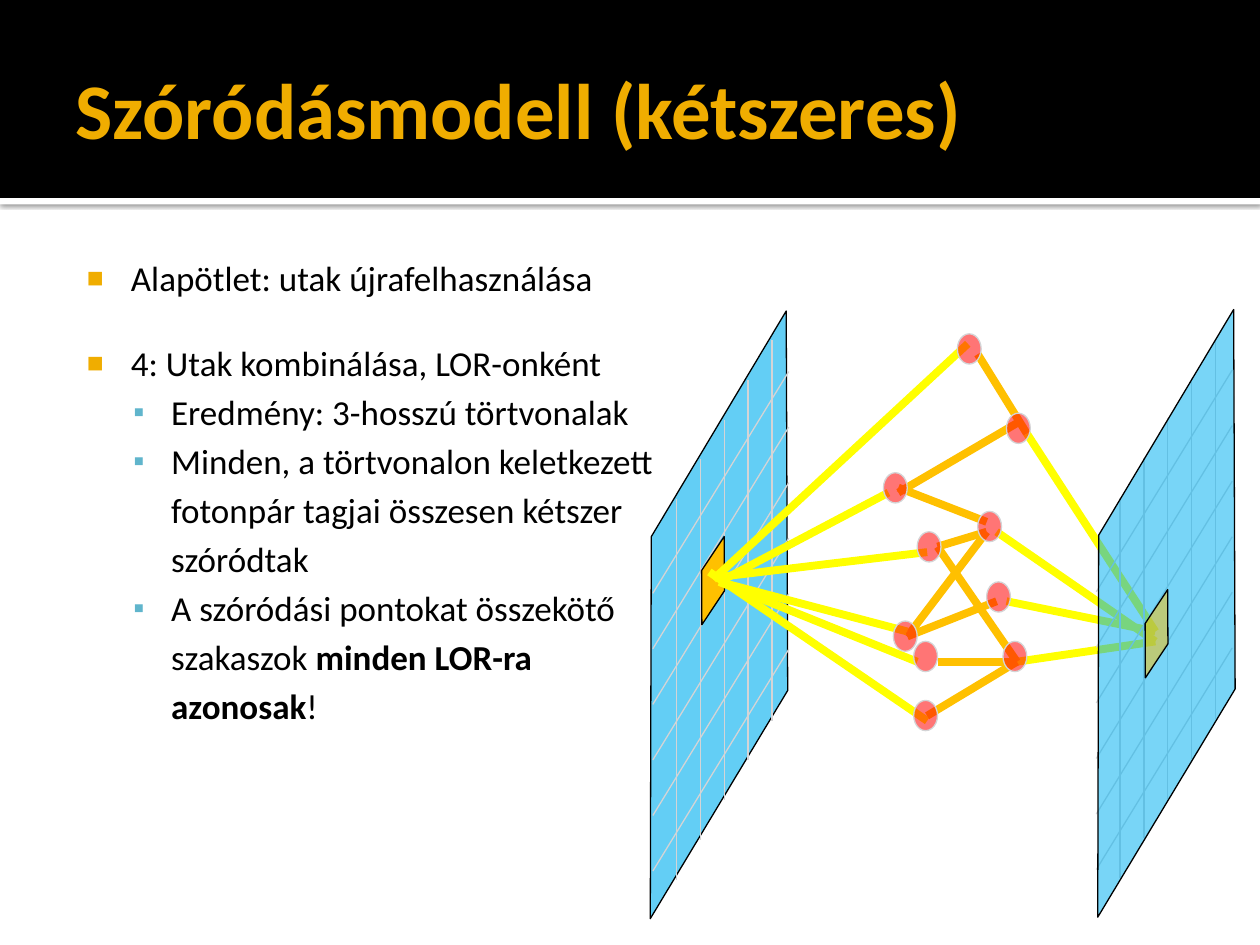
from lxml.etree import SubElement
from pptx import Presentation
from pptx.dml.color import RGBColor
from pptx.enum.shapes import MSO_CONNECTOR, MSO_SHAPE
from pptx.enum.text import MSO_ANCHOR, MSO_AUTO_SIZE, PP_ALIGN
from pptx.oxml.ns import qn
from pptx.util import Cm, Pt

COLORS = {
    "black": "000000", "white": "FFFFFF", "gold": "F0AD00", "teal": "60B5CC",
    "panel": "00B0F0", "grid": "D4D4D6", "orange": "FFC000",
    "yellow": "FFFF00", "red": "FF0000",
}

# (level, bullet?, space before in points, runs of (text, bold))
BODY = [
    (0, True, 0, [("Alapötlet: utak újrafelhasználása", False)]),
    (0, True, 24.4, [("4: Utak kombinálása, LOR-onként", False)]),
    (1, True, 4, [("Eredmény: 3-hosszú törtvonalak", False)]),
    (1, True, 4, [("Minden, a törtvonalon keletkezett", False)]),
    (1, False, 4, [("fotonpár tagjai összesen kétszer", False)]),
    (1, False, 4, [("szóródtak", False)]),
    (1, True, 4, [("A szóródási pontokat összekötő", False)]),
    (1, False, 4, [("szakaszok ", False), ("minden LOR-ra", True)]),
    (1, False, 4, [("azonosak", True), ("!", False)]),
]
# Per level: left margin, hanging indent, bullet, bullet colour, bullet size
LEVELS = [(1.22, 0.89, "■", "gold", 80), (2.03, 0.76, "▪", "teal", 90)]

# All places below are in centimetres; a ray is (colour, x1, y1, x2, y2)
RAYS_BEHIND = [
    ("orange", 19.89, 10.72, 18.29, 12.83),
    ("yellow", 20.7, 8.74, 23.29, 12.73),
    ("yellow", 20.09, 10.72, 23.29, 12.93),
    ("yellow", 20.29, 12.12, 23.29, 12.73),
    ("yellow", 20.5, 13.34, 23.29, 12.93),
]
RAYS_FRONT = [
    ("yellow", 14.5, 11.73, 18.29, 12.73),
    ("yellow", 14.5, 11.73, 17.91, 9.93),
    ("yellow", 14.38, 11.68, 19.51, 6.93),
    ("orange", 20.5, 8.53, 18.11, 9.93),
    ("orange", 19.89, 10.52, 18.11, 9.83),
    ("yellow", 14.3, 11.53, 18.69, 14.53),
    ("yellow", 14.5, 11.63, 18.69, 11.13),
    ("orange", 20.7, 8.74, 19.71, 7.14),
    ("orange", 20.09, 12.12, 18.29, 12.83),
    ("orange", 20.5, 13.34, 18.9, 11.02),
    ("orange", 19.89, 10.72, 18.9, 11.02),
    ("orange", 20.5, 13.34, 18.69, 14.43),
    ("yellow", 14.5, 11.73, 18.49, 13.34),
    ("orange", 20.5, 13.34, 18.9, 13.34),
]
SCATTER_POINTS = [
    (19.71, 10.31), (18.01, 12.52), (19.3, 6.73), (18.49, 10.72), (19.89, 11.73),
    (17.81, 9.53), (20.29, 8.33), (18.42, 14.12), (18.42, 12.93), (20.22, 12.93),
]
PANEL = [(13.13, 10.82), (13.11, 18.52), (15.88, 13.92), (15.85, 6.27)]


def rgb(name):
    return RGBColor.from_string(COLORS[name])


def write(p, text, size=20, color="black", bold=False, font="Calibri"):
    r = p.add_run()
    r.text = text
    r.font.size, r.font.bold, r.font.name = Pt(size), bold, font
    r.font.color.rgb = rgb(color)
    return r


def set_bullet(p, char, color, percent):
    pPr = p._p.get_or_add_pPr()
    clr = SubElement(pPr, qn("a:buClr"))
    SubElement(clr, qn("a:srgbClr"), val=COLORS[color])
    SubElement(pPr, qn("a:buSzPct"), val=str(percent * 1000))
    SubElement(pPr, qn("a:buChar"), char=char)


class SlideBuilder:
    """Holds the slide and the common line width."""

    def __init__(self, slide, thin=0.75):
        self.s, self.thin = slide, thin

    def paint(self, sp, fill, alpha=100, line="black"):
        sp.shadow.inherit = False
        sp.fill.solid()
        sp.fill.fore_color.rgb = rgb(fill)
        if alpha < 100:
            clr = sp._element.spPr.find(qn("a:solidFill"))[0]
            SubElement(clr, qn("a:alpha"), val=str(alpha * 1000))
        if line:
            sp.line.color.rgb = rgb(line)
            sp.line.width = Pt(self.thin)
        else:
            sp.line.fill.background()
        return sp

    def shape(self, kind, x, y, w, h, fill, **style):
        sp = self.s.shapes.add_shape(kind, Cm(x), Cm(y), Cm(w), Cm(h))
        return self.paint(sp, fill, **style)

    def outline(self, points, fill, **style):
        start, *rest = [(Cm(x), Cm(y)) for x, y in points]
        fb = self.s.shapes.build_freeform(*start)
        fb.add_line_segments(rest, close=True)
        return self.paint(fb.convert_to_shape(), fill, **style)

    def line(self, color, x1, y1, x2, y2, width=4.5):
        c = self.s.shapes.add_connector(MSO_CONNECTOR.STRAIGHT, Cm(x1), Cm(y1), Cm(x2), Cm(y2))
        c.line.color.rgb = rgb(color)
        c.line.width = Pt(width)
        SubElement(c._element.spPr, qn("a:effectLst"))

    def rays(self, rays):
        for ray in rays:
            self.line(*ray)

    def panel(self, dx, dy, alpha):
        self.outline([(x + dx, y + dy) for x, y in PANEL], "panel", alpha=alpha)

    def grid(self, dx, dy):
        for i in range(5):
            x, y = 13.64 + 0.48 * i + dx, 10.06 - 0.8 * i + dy
            self.line("grid", x, y, x, y + 7.67, self.thin)
        for i in range(6):
            y = 7.49 + 1.12 * i + dy
            self.line("grid", 15.9 + dx, y, 13.16 + dx, y + 4.47, self.thin)

    def cell(self, x, y, alpha=100):
        """Highlighted detector cell lying in the plane of a panel."""
        sp = self.shape(MSO_SHAPE.PARALLELOGRAM, x, y, 1.73, 0.61, "orange", alpha=alpha)
        sp.adjustments[0] = 1.49
        sp.rotation = 303.6

    def header(self):
        strip = self.shape(MSO_SHAPE.RECTANGLE, 0, 3.99, 25.4, 0.13, "white", line=None)
        effects = strip._element.spPr.find(qn("a:effectLst"))
        shadow = SubElement(effects, qn("a:outerShdw"), blurRad=str(Pt(2.5)),
                            dist=str(Pt(0.8)), dir="5400000", algn="t", rotWithShape="0")
        clr = SubElement(shadow, qn("a:srgbClr"), val=COLORS["black"])
        SubElement(clr, qn("a:alpha"), val="60000")
        self.shape(MSO_SHAPE.RECTANGLE, 0, 0, 25.4, 3.99, "black", line=None)

    def place(self, ph, box, insets, anchor):
        """Move a placeholder above what is drawn so far and set its frame."""
        self.s.shapes._spTree.append(ph._element)
        ph.left, ph.top, ph.width, ph.height = map(Cm, box)
        tf = ph.text_frame
        tf.margin_left, tf.margin_top, tf.margin_right, tf.margin_bottom = map(Cm, insets)
        tf.vertical_anchor, tf.word_wrap = anchor, True
        tf.auto_size = MSO_AUTO_SIZE.NONE
        return tf

    def title(self, text):
        tf = self.place(self.s.shapes.title, (1.27, 0.43, 22.86, 3.48),
                        (0.25, 0.13, 0.13, 0.13), MSO_ANCHOR.MIDDLE)
        p = tf.paragraphs[0]
        p.alignment = PP_ALIGN.LEFT
        write(p, text, size=45, color="gold", bold=True)

    def body(self, items):
        tf = self.place(self.s.placeholders[1], (1.27, 4.93, 18.82, 12.85),
                        (0.15, 0.25, 0.25, 0.13), MSO_ANCHOR.TOP)
        for i, (level, bulleted, before, runs) in enumerate(items):
            p = tf.add_paragraph() if i else tf.paragraphs[0]
            p.level, p.space_before = level, Pt(before)
            margin, hanging, *bullet = LEVELS[level]
            pPr = p._p.get_or_add_pPr()
            pPr.set("marL", str(Cm(margin)))
            pPr.set("indent", str(-Cm(hanging) if bulleted else 0))
            if bulleted:
                set_bullet(p, *bullet)
            else:
                SubElement(pPr, qn("a:buNone"))
            for text, bold in runs:
                write(p, text, bold=bold)


def main():
    prs = Presentation()
    prs.slide_width, prs.slide_height = Cm(25.4), Cm(19.05)
    b = SlideBuilder(prs.slides.add_slide(prs.slide_layouts[1]))
    b.header()
    b.rays(RAYS_BEHIND)
    b.body(BODY)
    b.title("Szóródásmodell (kétszeres)")
    b.panel(0, 0, alpha=61)
    b.grid(0, 0)
    b.grid(8.94, -0.03)
    b.panel(9.02, -0.03, alpha=53)
    b.cell(22.45, 12.47, alpha=50)
    b.cell(13.51, 11.4)
    b.rays(RAYS_FRONT)
    for x, y in SCATTER_POINTS:
        b.shape(MSO_SHAPE.OVAL, x, y, 0.48, 0.61, "red", alpha=54, line="grid")
    prs.save("out.pptx")


if __name__ == "__main__":
    main()
